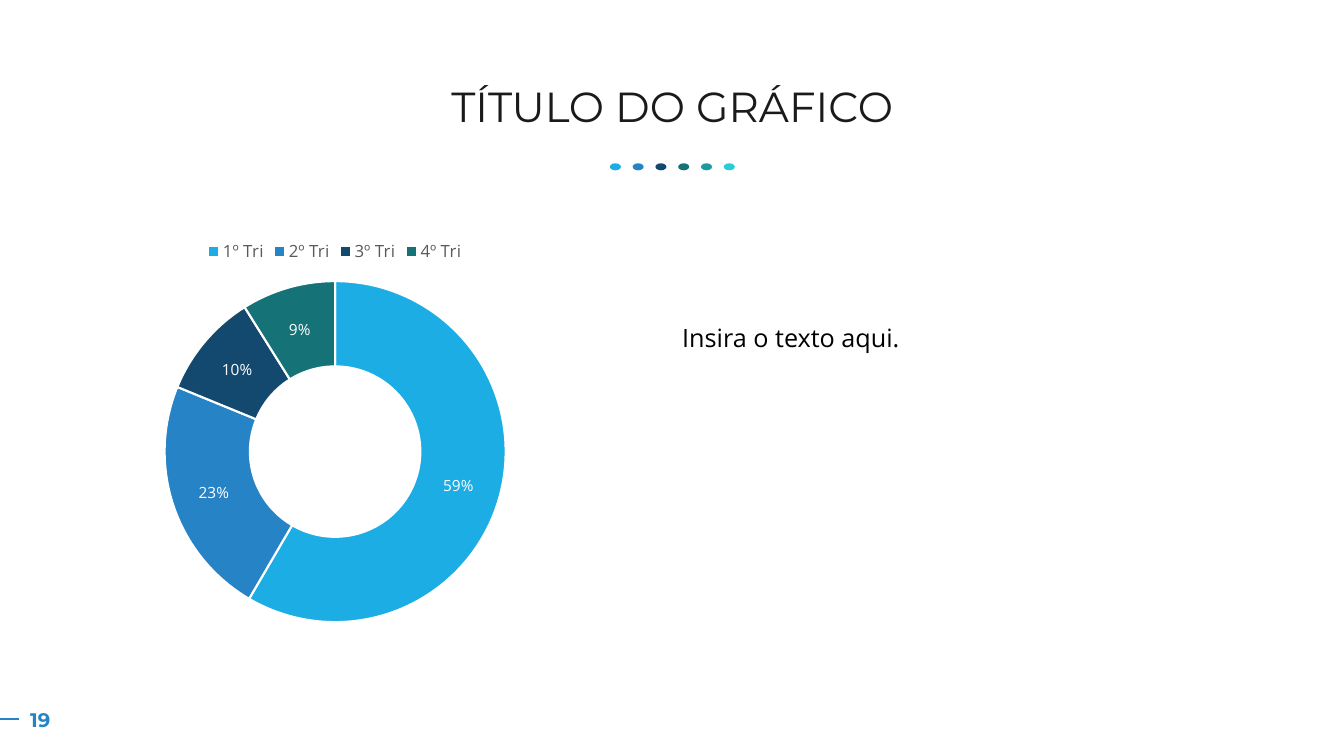
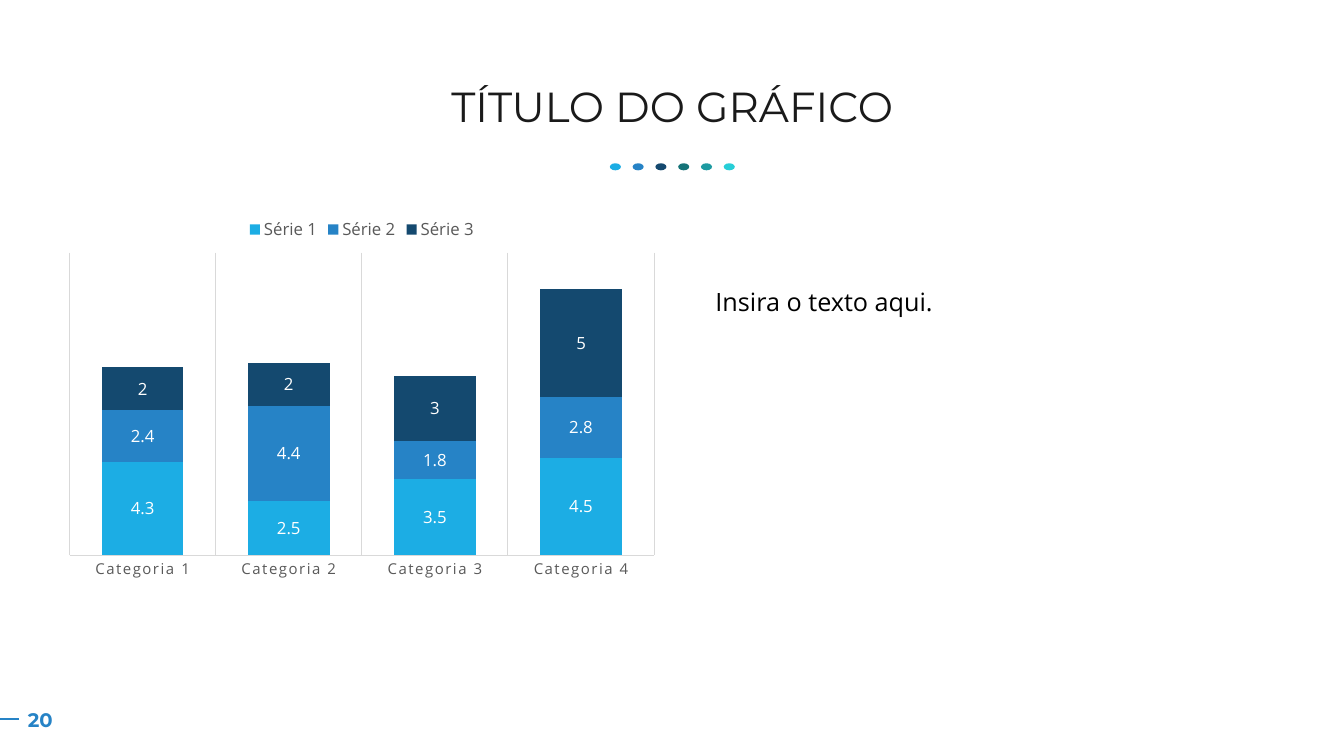
from dataclasses import dataclass

from pptx import Presentation
from pptx.chart.data import CategoryChartData
from pptx.dml.color import RGBColor
from pptx.enum.chart import XL_CHART_TYPE, XL_LABEL_POSITION, XL_LEGEND_POSITION, XL_TICK_MARK
from pptx.enum.shapes import MSO_CONNECTOR, MSO_SHAPE
from pptx.enum.text import MSO_ANCHOR, PP_ALIGN
from pptx.oxml.ns import qn
from pptx.util import Inches, Pt
from lxml import etree

DOUGHNUT = XL_CHART_TYPE.DOUGHNUT
STACKED = XL_CHART_TYPE.COLUMN_STACKED
LABEL_CENTER = XL_LABEL_POSITION.CENTER
LEGEND_TOP = XL_LEGEND_POSITION.TOP
NO_TICK = XL_TICK_MARK.NONE
STRAIGHT = MSO_CONNECTOR.STRAIGHT
OVAL = MSO_SHAPE.OVAL
TOP, MIDDLE = MSO_ANCHOR.TOP, MSO_ANCHOR.MIDDLE
LEFT, CENTER = PP_ALIGN.LEFT, PP_ALIGN.CENTER


@dataclass(frozen=True)
class Theme:
    heading_font: str = "Montserrat"
    body_font: str = "Open Sans"
    accents: tuple = ("1CADE4", "2683C6", "14496F", "157378", "1D9AA1", "27CED7")
    title: str = "1A1A1A"
    text: str = "000000"
    muted: str = "595959"
    rule: str = "D9D9D9"
    white: str = "FFFFFF"
    title_size: float = 30
    body_size: float = 18
    number_size: float = 14
    legend_size: float = 12
    column_label_size: float = 12
    ring_label_size: float = 11
    axis_size: float = 10.64
    chart_size: float = 10


def rgb(color):
    return RGBColor.from_string(color)


def set_font(font, name, size, color, bold=False):
    font.name, font.size, font.bold = name, Pt(size), bold
    font.color.rgb = rgb(color)


def set_fill(target, color):
    target.fill.solid()
    target.fill.fore_color.rgb = rgb(color)


def set_line(line, color, width):
    line.color.rgb = rgb(color)
    line.width = Pt(width)


class SlideBuilder:
    def __init__(self, deck, theme):
        self.deck, self.theme = deck, theme
        self.page = None

    def start(self, title, number):
        """Add a blank page with the shared title, dots and page number."""
        theme = self.theme
        self.page = self.deck.slides.add_slide(self.deck.slide_layouts[6])
        self.text(str(number), 0.12, 6.97, 0.56, 0.34, font=theme.heading_font,
                  size=theme.number_size, color=theme.accents[1], bold=True,
                  align=CENTER, anchor=MIDDLE)
        self.line(0.19, 7.13, 0, 7.13, theme.accents[1], 1.5)
        self.dots(6.05, 7.18, 1.62)
        self.text(title, 0.57, 0.72, 12.2, 0.72, font=theme.heading_font,
                  size=theme.title_size, color=theme.title, align=CENTER,
                  anchor=MIDDLE, inset=0, spacing=0.9)

    def text(self, content, left, top, width, height, *, font=None, size=None,
             color=None, bold=False, align=LEFT, anchor=TOP, inset=None, spacing=None):
        theme = self.theme
        box = self.page.shapes.add_textbox(Inches(left), Inches(top),
                                           Inches(width), Inches(height))
        frame = box.text_frame
        frame.word_wrap = True
        frame.vertical_anchor = anchor
        if inset is not None:
            frame.margin_left = frame.margin_right = Inches(inset)
            frame.margin_top = frame.margin_bottom = Inches(inset)
        para = frame.paragraphs[0]
        para.alignment, para.line_spacing = align, spacing
        span = para.add_run()
        span.text = content
        set_font(span.font, font or theme.body_font, size or theme.body_size,
                 color or theme.text, bold)

    def line(self, x1, y1, x2, y2, color, width):
        line = self.page.shapes.add_connector(STRAIGHT, Inches(x1), Inches(y1),
                                              Inches(x2), Inches(y2))
        set_line(line.line, color, width)
        etree.SubElement(line.element.spPr, qn("a:effectLst"))

    def dots(self, first, last, top):
        """Spread one dot per accent colour evenly from first to last."""
        accents = self.theme.accents
        step = (last - first) / (len(accents) - 1)
        for index, color in enumerate(accents):
            dot = self.page.shapes.add_shape(OVAL, Inches(first + index * step),
                                             Inches(top), Inches(0.11), Inches(0.07))
            dot.shadow.inherit = False
            set_fill(dot, color)
            dot.line.fill.background()

    def chart(self, kind, categories, series, left, top, width, height):
        theme = self.theme
        data = CategoryChartData()
        data.categories = categories
        for name, values in series.items():
            data.add_series(name, values)
        chart = self.page.shapes.add_chart(kind, Inches(left), Inches(top), Inches(width),
                                           Inches(height), data).chart
        chart.has_title = False
        set_font(chart.font, theme.body_font, theme.chart_size, theme.text)
        chart.has_legend = True
        chart.legend.position = LEGEND_TOP
        chart.legend.include_in_layout = False
        set_font(chart.legend.font, theme.body_font, theme.legend_size, theme.muted)
        return chart

    def labels(self, owner, size):
        labels = owner.data_labels
        labels.show_value = True
        set_font(labels.font, self.theme.body_font, size, self.theme.white)
        return labels

    def doughnut(self, categories, series, *place):
        theme = self.theme
        chart = self.chart(DOUGHNUT, categories, series, *place)
        plot = chart.plots[0]
        plot.vary_by_categories = True
        ring = plot.series[0]
        for index, color in zip(range(len(categories)), theme.accents):
            part = ring.points[index].format
            set_fill(part, color)
            set_line(part.line, theme.white, 1.5)
        labels = self.labels(ring, theme.ring_label_size)
        labels.number_format = '0"%"'
        labels.number_format_is_linked = False

    def stacked_columns(self, categories, series, *place, maximum):
        theme = self.theme
        chart = self.chart(STACKED, categories, series, *place)
        plot = chart.plots[0]
        plot.vary_by_categories = False
        plot.gap_width, plot.overlap = 79, 100
        for column, color in zip(plot.series, theme.accents):
            set_fill(column.format, color)
            self.labels(column, theme.column_label_size).position = LABEL_CENTER

        values = chart.value_axis
        values.visible = values.has_major_gridlines = False
        values.minimum_scale, values.maximum_scale = 0, maximum

        axis = chart.category_axis
        axis.major_tick_mark = axis.minor_tick_mark = NO_TICK
        axis.has_major_gridlines = True
        for line in (axis.format.line, axis.major_gridlines.format.line):
            set_line(line, theme.rule, 0.75)
        set_font(axis.tick_labels.font, theme.body_font, theme.axis_size, theme.muted)
        for style in axis._element.iter(qn("a:defRPr")):
            style.set("kern", "1200")
            style.set("spc", "120")


def main():
    deck = Presentation()
    deck.slide_width, deck.slide_height = Inches(40 / 3), Inches(7.5)
    slides = SlideBuilder(deck, Theme())
    title, body = "TÍTULO DO GRÁFICO", "Insira o texto aqui."

    slides.start(title, 19)
    slides.doughnut([f"{quarter}º Tri" for quarter in range(1, 5)],
                    {"Series 1": (59, 23, 10, 9)}, 0.78, 2.27, 5.09, 4.04)
    slides.text(body, 6.67, 3.15, 5.16, 2.29)

    slides.start(title, 20)
    slides.text(body, 7, 2.79, 5.16, 2.29)
    slides.stacked_columns([f"Categoria {number}" for number in range(1, 5)],
                           {"Série 1": (4.3, 2.5, 3.5, 4.5),
                            "Série 2": (2.4, 4.4, 1.8, 2.8),
                            "Série 3": (2, 2, 3, 5)},
                           0.57, 2.05, 6.04, 3.77, maximum=14)
    deck.save("out.pptx")


if __name__ == "__main__":
    main()
